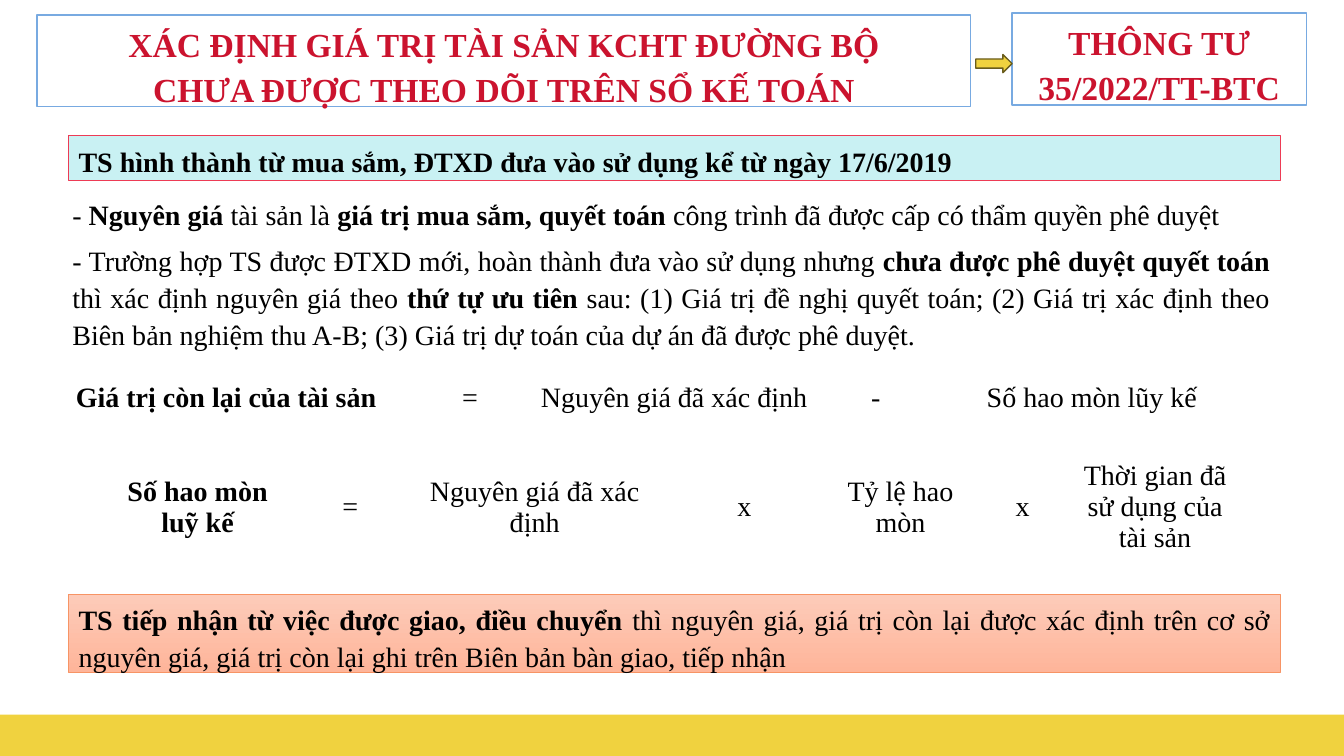
"""Build the slide on valuing road assets not yet recorded in the books."""
from lxml.etree import SubElement
from pptx import Presentation
from pptx.dml.color import RGBColor
from pptx.enum.shapes import MSO_SHAPE
from pptx.enum.text import MSO_ANCHOR, MSO_AUTO_SIZE, PP_ALIGN
from pptx.oxml.ns import qn
from pptx.util import Pt

FONT = "Times New Roman"
BLACK, WHITE, RED, YELLOW = "000000", "FFFFFF", "CB132E", "F0D23F"
HEADING_LINE = "78AAE1"
SLIDE_WIDTH, SLIDE_HEIGHT = 960, 540

TITLE = [
    [("XÁC ĐỊNH GIÁ TRỊ TÀI SẢN KCHT ĐƯỜNG BỘ", True)],
    [("CHƯA ĐƯỢC THEO DÕI TRÊN SỔ KẾ TOÁN", True)],
]
CIRCULAR = [[("THÔNG TƯ 35/2022/TT-BTC", True)]]
PURCHASED = [[("TS hình thành từ mua sắm, ĐTXD đưa vào sử dụng kể từ ngày 17/6/2019", True)]]
ORIGINAL_COST = [
    [
        ("- ", False),
        ("Nguyên giá", True),
        (" tài sản là ", False),
        ("giá trị mua sắm, quyết toán", True),
        (" công trình đã được cấp có thẩm quyền phê duyệt", False),
    ],
    [
        ("- Trường hợp TS được ĐTXD mới, hoàn thành đưa vào sử dụng nhưng ", False),
        ("chưa được phê duyệt quyết toán ", True),
        ("thì xác định nguyên giá theo ", False),
        ("thứ tự ưu tiên ", True),
        ("sau: (1) Giá trị đề nghị quyết toán; (2) Giá trị xác định theo Biên bản "
         "nghiệm thu A-B; (3) Giá trị dự toán của dự án đã được phê duyệt.", False),
    ],
]
TRANSFERRED = [[
    ("TS tiếp nhận từ việc được giao, điều chuyển ", True),
    ("thì nguyên giá, giá trị còn lại được xác định trên cơ sở nguyên giá, "
     "giá trị còn lại ghi trên Biên bản bàn giao, tiếp nhận", False),
]]
REMAINING_VALUE = [
    ("Giá trị còn lại của tài sản", 264.2), ("=", 84.2), ("Nguyên giá đã xác định", 207.4),
    ("-", 80.6), ("Số hao mòn lũy kế", 228.2),
]
DEPRECIATION = [
    ("Số hao mòn luỹ kế", 141.1), ("=", 77), ("Nguyên giá đã xác định", 186.5), ("x", 113),
    ("Tỷ lệ hao mòn", 110.2), ("x", 64.1), ("Thời gian đã sử dụng của tài sản", 125.3),
]


def color(value):
    return RGBColor.from_string(value)


def write(frame, paragraphs, size=20, ink=BLACK, align=PP_ALIGN.JUSTIFY, spacing=1.1, before=0):
    frame.word_wrap = True
    for index, runs in enumerate(paragraphs):
        paragraph = frame.paragraphs[0] if index == 0 else frame.add_paragraph()
        paragraph.alignment = align
        paragraph.line_spacing = spacing
        paragraph.space_before = Pt(before)
        for text, bold in runs:
            run = paragraph.add_run()
            run.text = text
            run.font.name = FONT
            run.font.size = Pt(size)
            run.font.bold = bold
            run.font.color.rgb = color(ink)


def add_box(slide, box, fill, line=None, width=1, kind=MSO_SHAPE.RECTANGLE):
    shape = slide.shapes.add_shape(kind, *map(Pt, box))
    shape.shadow.inherit = False
    if isinstance(fill, tuple):
        shape.fill.gradient()
        shape.fill.gradient_angle = 270
        for stop, value, position in zip(shape.fill.gradient_stops, fill, (0, 1)):
            stop.color.rgb = color(value)
            stop.position = position
    else:
        shape.fill.solid()
        shape.fill.fore_color.rgb = color(fill)
    if line:
        shape.line.color.rgb = color(line)
        shape.line.width = Pt(width)
    else:
        shape.line.fill.background()
    return shape


def add_panel(slide, box, paragraphs, fill, line, width, **style):
    panel = add_box(slide, box, fill, line, width)
    write(panel.text_frame, paragraphs, **style)
    panel.text_frame.vertical_anchor = MSO_ANCHOR.TOP
    panel.text_frame.auto_size = MSO_AUTO_SIZE.SHAPE_TO_FIT_TEXT


def add_formula(slide, left, top, height, terms, inset=None, border=None):
    total = sum(width for _, width in terms)
    table = slide.shapes.add_table(1, len(terms), Pt(left), Pt(top), Pt(total), Pt(height)).table
    table.first_row = table.horz_banding = False
    for index, (text, width) in enumerate(terms):
        table.columns[index].width = Pt(width)
        cell = table.cell(0, index)
        cell.vertical_anchor = MSO_ANCHOR.MIDDLE
        if inset is not None:
            cell.margin_left = cell.margin_right = Pt(inset)
            cell.margin_top = cell.margin_bottom = Pt(inset)
        write(cell.text_frame, [[(text, index == 0)]], align=PP_ALIGN.CENTER, spacing=1.0)
        for side in ("a:lnL", "a:lnR", "a:lnT", "a:lnB"):
            edge = SubElement(cell._tc.get_or_add_tcPr(), qn(side), w=str(Pt(1)))
            if border:
                paint = SubElement(edge, qn("a:solidFill"))
                SubElement(paint, qn("a:srgbClr"), val=border)
            else:
                SubElement(edge, qn("a:noFill"))
        cell.fill.background()


def main():
    deck = Presentation()
    deck.slide_width, deck.slide_height = Pt(SLIDE_WIDTH), Pt(SLIDE_HEIGHT)
    slide = deck.slides.add_slide(deck.slide_layouts[6])

    footer_top = 510.5
    add_box(slide, (0, footer_top, SLIDE_WIDTH, SLIDE_HEIGHT - footer_top), YELLOW)

    heading = {"size": 24, "ink": RED, "align": PP_ALIGN.CENTER}
    add_panel(slide, (26.6, 10.8, 666.7, 65.5), TITLE, WHITE, HEADING_LINE, 1, **heading)

    cost = slide.shapes.add_textbox(Pt(44.6), Pt(139.7), Pt(869.8), Pt(110.2)).text_frame
    write(cost, ORIGINAL_COST, before=6)
    cost.vertical_anchor = MSO_ANCHOR.MIDDLE
    cost.auto_size = MSO_AUTO_SIZE.SHAPE_TO_FIT_TEXT

    add_panel(slide, (49, 97, 865.4, 31.7), PURCHASED, "C9F1F3", "ED3B55", 0.5)
    add_panel(slide, (49, 424.8, 865.4, 55.4), TRANSFERRED, ("FDCBB9", "FEB59A"), "F79465", 0.5)
    add_panel(slide, (722.9, 9.4, 210.2, 65.5), CIRCULAR, WHITE, HEADING_LINE, 1, **heading)
    add_box(slide, (697, 38.9, 25.9, 13), YELLOW, "695C1C", 1, MSO_SHAPE.RIGHT_ARROW)

    add_formula(slide, 29.5, 272.2, 23.8, REMAINING_VALUE, inset=0)
    add_formula(slide, 70.6, 322.6, 79.2, DEPRECIATION, border=WHITE)
    deck.save("out.pptx")


if __name__ == "__main__":
    main()
